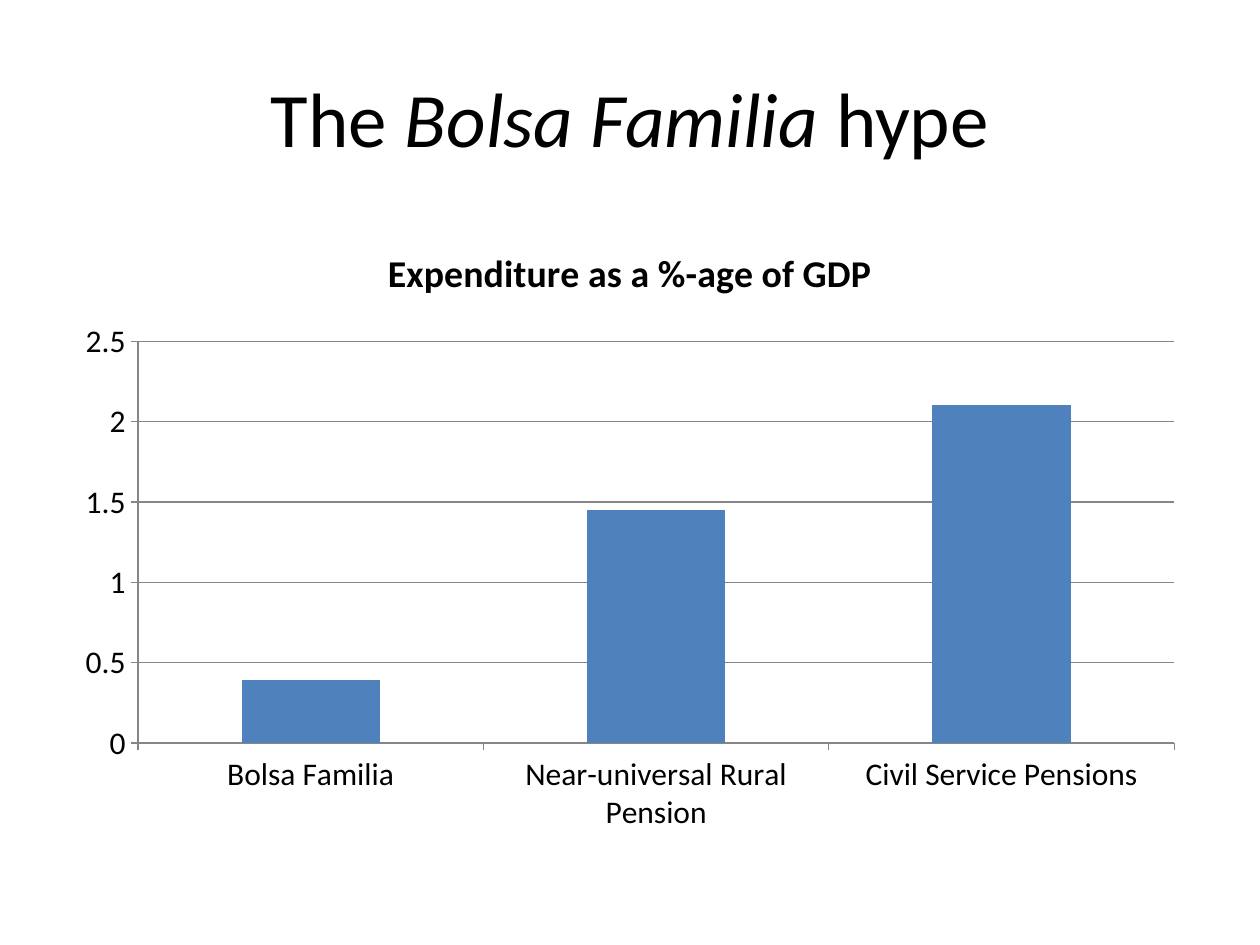
from pptx import Presentation
from pptx.chart.data import CategoryChartData
from pptx.dml.color import RGBColor
from pptx.enum.chart import XL_CHART_TYPE, XL_TICK_MARK
from pptx.enum.text import MSO_ANCHOR, PP_ALIGN
from pptx.util import Inches, Pt

COLORS = {"text": "000000", "bar": "4F81BD", "line": "868686"}
FONT = "Calibri"
SPENDING = {
    "Bolsa Familia": 0.39,
    "Near-universal Rural Pension": 1.45,
    "Civil Service Pensions": 2.1,
}


def rgb(name):
    """Return the named colour."""
    return RGBColor.from_string(COLORS[name])


def style_font(font, size, bold=False, italic=False, color="text"):
    """Set the face, size, weight, slant and colour of a font."""
    font.name, font.size = FONT, Pt(size)
    font.bold, font.italic = bold, italic
    font.color.rgb = rgb(color)


def add_text(p, text, **style):
    """Add a formatted run to a paragraph."""
    r = p.add_run()
    r.text = text
    style_font(r.font, **style)


def add_title(s, left, top, width, height):
    """Place the centred slide title in the given box."""
    tf = s.shapes.add_textbox(left, top, width, height).text_frame
    tf.word_wrap = True
    tf.vertical_anchor = MSO_ANCHOR.MIDDLE
    p = tf.paragraphs[0]
    p.alignment = PP_ALIGN.CENTER
    add_text(p, "The ", size=44)
    add_text(p, "Bolsa Familia ", size=44, italic=True)
    add_text(p, "hype", size=44)


def style_line(line):
    """Give an axis or gridline its thin grey stroke."""
    line.color.rgb = rgb("line")
    line.width = Pt(0.75)


def add_spending_chart(s, left, top, width, height):
    """Place the expenditure column chart in the given box."""
    data = CategoryChartData()
    data.categories = list(SPENDING)
    data.add_series("Series 1", list(SPENDING.values()))
    chart = s.shapes.add_chart(
        XL_CHART_TYPE.COLUMN_CLUSTERED, left, top, width, height, data
    ).chart
    style_font(chart.font, 18)
    chart.has_legend = False
    chart.has_title = True
    add_text(chart.chart_title.text_frame.paragraphs[0],
             "Expenditure as a %-age of GDP", size=21.6, bold=True)
    chart.chart_title.include_in_layout = False

    for axis in (chart.category_axis, chart.value_axis):
        axis.major_tick_mark = XL_TICK_MARK.OUTSIDE
        axis.minor_tick_mark = XL_TICK_MARK.NONE
        style_line(axis.format.line)
    value_axis = chart.value_axis
    value_axis.minimum_scale, value_axis.maximum_scale = 0, 2.5
    value_axis.major_unit = 0.5
    value_axis.has_major_gridlines = True
    style_line(value_axis.major_gridlines.format.line)

    plot = chart.plots[0]
    plot.gap_width = 150
    plot.vary_by_categories = False
    fill = plot.series[0].format.fill
    fill.solid()
    fill.fore_color.rgb = rgb("bar")


def main():
    """Build and save the slide."""
    prs = Presentation()
    prs.slide_width, prs.slide_height = Inches(10), Inches(7.5)
    s = prs.slides.add_slide(prs.slide_layouts[6])
    left, width = Inches(0.5), Inches(9)
    add_title(s, left, Inches(0.3), width, Inches(1.25))
    add_spending_chart(s, left, Inches(1.75), width, Inches(4.95))
    prs.save("out.pptx")


if __name__ == "__main__":
    main()
